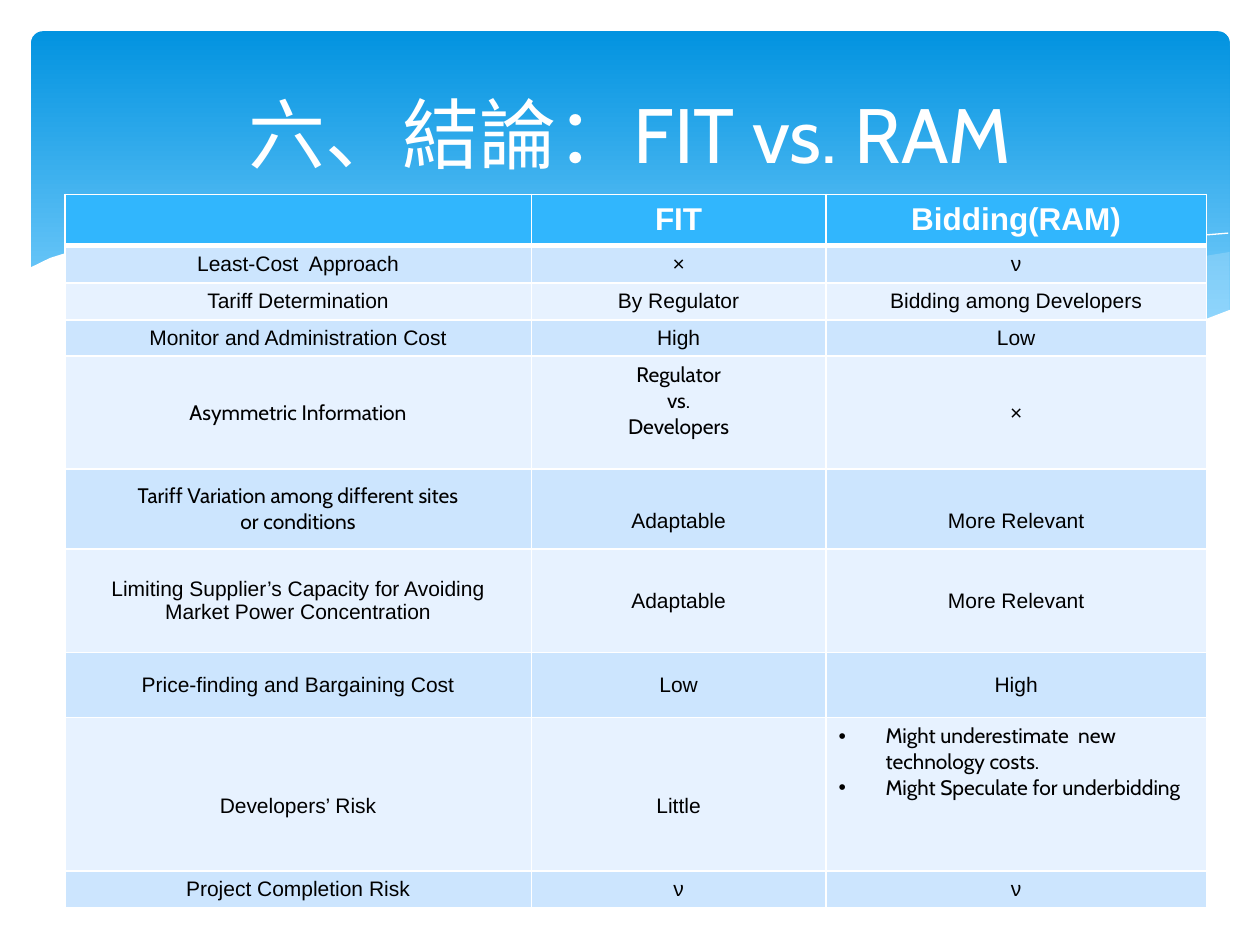
from lxml import etree
from pptx import Presentation
from pptx.dml.color import RGBColor
from pptx.enum.shapes import MSO_SHAPE
from pptx.enum.text import MSO_ANCHOR, PP_ALIGN
from pptx.oxml.ns import qn
from pptx.util import Cm, Pt

CENTER, LEFT = PP_ALIGN.CENTER, PP_ALIGN.LEFT
MIDDLE, TOP = MSO_ANCHOR.MIDDLE, MSO_ANCHOR.TOP
ROUNDED = MSO_SHAPE.ROUNDED_RECTANGLE
TITLE_ONLY = 5

WHITE = RGBColor(0xFF, 0xFF, 0xFF)
BLACK = RGBColor(0, 0, 0)
BAND_DARK = RGBColor(0x02, 0x93, 0xE0)
BAND_LIGHT = RGBColor(0x81, 0xD2, 0xFE)
WAVE_PALE = RGBColor(0xC6, 0xE7, 0xFC)
HEADER_BLUE = RGBColor(0x31, 0xB6, 0xFD)
ROW_FILLS = (RGBColor(0xCC, 0xE5, 0xFE), RGBColor(0xE7, 0xF2, 0xFF))

# Wave points in centimetres from the top left corner of the wave box
RIGHT_WAVE = [
    (24.21, 0.41), (23.16, 0.58), (22.05, 0.81), (20.55, 1.17), (19.2, 1.47),
    (17.93, 1.75), (16.21, 2.06), (17.32, 2.21), (18.64, 2.34), (19.81, 2.39),
    (20.85, 2.36), (21.79, 2.26), (22.61, 2.11), (23.34, 1.9), (24.21, 1.6)]
MIDDLE_WAVE = [
    (22.1, 2.26), (20.68, 2.06), (19.1, 1.78), (17.35, 1.42), (15.39, 0.97),
    (13.87, 0.61), (12.47, 0.36), (11.23, 0.18), (10.08, 0.08), (8.59, 0.03),
    (7.37, 0.1), (6.68, 0.18), (8.1, 0.38), (9.68, 0.69), (10.82, 0.97),
    (12.88, 1.42), (14.68, 1.8), (16.31, 2.08), (17.75, 2.29), (19.05, 2.36),
    (20.19, 2.39), (21.18, 2.36)]
LONG_CREST = [
    (7.26, 0.28), (8.15, 0.15), (9.6, 0.08), (11.33, 0.13), (12.95, 0.25),
    (14.86, 0.51), (16.31, 0.74), (17.88, 1.07), (19.61, 1.45), (21.49, 1.96),
    (22.45, 2.24)]
SHORT_CREST = [
    (14.99, 1.85), (16.48, 1.45), (18.42, 0.99), (19.89, 0.66), (21.41, 0.38),
    (22.53, 0.2), (23.57, 0.08), (24.18, 0.03)]
WHITE_WAVE = [
    (24.23, 1.57), (23.55, 1.83), (22.78, 2.06), (21.95, 2.21), (21.01, 2.31),
    (19.96, 2.36), (18.75, 2.31), (17.4, 2.18), (15.88, 1.98), (14.12, 1.68),
    (12.19, 1.24), (10.77, 0.91), (9.35, 0.58), (8.05, 0.33), (6.83, 0.15),
    (5.77, 0.05), (4.78, 0), (3.51, 0), (2.44, 0.08), (1.57, 0.23),
    (0.91, 0.38), (0.43, 0.53), (0, 0.74), (0, 3.68), (24.23, 3.68)]

COLUMN_WIDTHS = (9.4, 5.94, 7.67)
ROW_HEIGHTS = (0.95, 0.75, 0.75, 0.73, 2.28, 1.61, 2.08, 1.31, 3.1, 0.73)
# Each cell holds its paragraphs, one to a line
COMPARISON = [
    ("", "FIT", "Bidding(RAM)"),
    ("Least-Cost  Approach", "×", "ν"),
    ("Tariff Determination", "By Regulator", "Bidding among Developers"),
    ("Monitor and Administration Cost", "High", "Low"),
    ("Asymmetric Information", "Regulator\nvs.\nDevelopers", "×"),
    ("Tariff Variation among different sites\nor conditions", "Adaptable", "More Relevant"),
    ("Limiting Supplier’s Capacity for Avoiding Market Power Concentration",
     "Adaptable", "More Relevant"),
    ("Price-finding and Bargaining Cost", "Low", "High"),
    ("Developers’ Risk", "Little",
     "Might underestimate  new technology costs.\nMight Speculate for underbidding"),
    ("Project Completion Risk", "ν", "ν"),
]
CABIN_CELLS = {(4, 0), (4, 1), (5, 0), (8, 2)}
TOP_CELLS = {(4, 1), (8, 2)}
LOWERED_CELLS = {(5, 1), (5, 2), (8, 0), (8, 1)}
BULLETED_CELL = (8, 2)


def add_outline(slide, left, top, points, closed):
    vertices = [(left + Cm(x), top + Cm(y)) for x, y in points]
    builder = slide.shapes.build_freeform(*vertices[0])
    builder.add_line_segments(vertices[1:], close=closed)
    outline = builder.convert_to_shape()
    outline.shadow.inherit = False
    return outline


def add_wave(slide, left, top, points, color, opacity=100):
    wave = add_outline(slide, left, top, points, True)
    wave.fill.solid()
    wave.fill.fore_color.rgb = color
    wave.line.fill.background()
    if opacity < 100:
        tint = wave.fill._xPr.find(".//" + qn("a:srgbClr"))
        etree.SubElement(tint, qn("a:alpha"), val=str(opacity * 1000))


def add_crest(slide, left, top, points):
    crest = add_outline(slide, left, top, points, False)
    crest.fill.background()
    crest.line.color.rgb = WHITE
    crest.line.width = Pt(0.75)


def add_banner(slide, left, top, width, height):
    """Gradient band whose lower edge is cut by waves."""
    band = slide.shapes.add_shape(ROUNDED, left, top, width, height)
    band.adjustments[0] = 0.034
    band.shadow.inherit = False
    band.line.fill.background()
    band.fill.gradient()
    band.fill.gradient_angle = 270
    stops = band.fill.gradient_stops
    for stop, color, position in zip(stops, (BAND_DARK, BAND_LIGHT), (0, 0.9)):
        stop.color.rgb = color
        stop.position = position

    wave_left, wave_top = left - Cm(0.05), top + Cm(4.04)
    add_wave(slide, wave_left, wave_top, RIGHT_WAVE, WAVE_PALE, 29)
    add_wave(slide, wave_left, wave_top, MIDDLE_WAVE, WAVE_PALE, 40)
    for crest in (LONG_CREST, SHORT_CREST):
        add_crest(slide, wave_left, wave_top, crest)
    add_wave(slide, wave_left, wave_top, WHITE_WAVE, WHITE)


def add_run(paragraph, text, size, font, color, bold=False):
    run = paragraph.add_run()
    run.text = text
    run.font.size = Pt(size)
    run.font.name = font
    run.font.bold = bold
    run.font.color.rgb = color


def place_title(slide, left, top, width, height):
    title = slide.shapes.title
    title.left, title.top, title.width, title.height = left, top, width, height
    title.text_frame.vertical_anchor = MIDDLE
    heading = title.text_frame.paragraphs[0]
    heading.alignment = CENTER
    add_run(heading, "六、結論：FIT vs. RAM", 44, "Cabin", WHITE)
    title.element.getparent().append(title.element)  # in front of the banner


def set_borders(cell, top_width, bottom_width):
    properties = cell._tc.get_or_add_tcPr()
    sides = (("lnL", 1), ("lnR", 1), ("lnT", top_width), ("lnB", bottom_width))
    for index, (side, width) in enumerate(sides):
        border = etree.Element(qn(f"a:{side}"), w=str(Pt(width)))
        fill = etree.SubElement(border, qn("a:solidFill"))
        etree.SubElement(fill, qn("a:srgbClr"), val=str(WHITE))
        properties.insert(index, border)


def add_bullet(paragraph):
    properties = paragraph._p.get_or_add_pPr()
    properties.set("marL", str(Cm(0.95)))
    properties.set("indent", str(-Cm(0.95)))
    etree.SubElement(properties, qn("a:buFont"), typeface="Arial")
    etree.SubElement(properties, qn("a:buChar"), char="•")


def fill_cell(cell, row, column, text):
    header = row == 0
    place = (row, column)
    cell.fill.solid()
    cell.fill.fore_color.rgb = HEADER_BLUE if header else ROW_FILLS[(row - 1) % 2]
    set_borders(cell, 3 if row == 1 else 1, 3 if header else 1)
    cell.vertical_anchor = TOP if place in TOP_CELLS else MIDDLE
    if place in LOWERED_CELLS:
        cell.margin_top = Cm(0.6)
    font = "Cabin" if place in CABIN_CELLS else "Arial"
    for index, line in enumerate(text.split("\n") if text else []):
        frame = cell.text_frame
        paragraph = frame.add_paragraph() if index else frame.paragraphs[0]
        paragraph.alignment = LEFT if place == BULLETED_CELL else CENTER
        if place == BULLETED_CELL:
            add_bullet(paragraph)
        add_run(paragraph, line, 18 if header else 12, font,
                WHITE if header else BLACK, header)


def add_comparison(slide, left, top):
    table = slide.shapes.add_table(
        len(ROW_HEIGHTS), len(COLUMN_WIDTHS), left, top,
        Cm(sum(COLUMN_WIDTHS)), Cm(sum(ROW_HEIGHTS))).table
    for column, width in zip(table.columns, COLUMN_WIDTHS):
        column.width = Cm(width)
    for row, height in zip(table.rows, ROW_HEIGHTS):
        row.height = Cm(height)
    for row, texts in enumerate(COMPARISON):
        for column, text in enumerate(texts):
            fill_cell(table.cell(row, column), row, column, text)


def main():
    deck = Presentation()
    deck.slide_width, deck.slide_height = Cm(25.4), Cm(19.05)
    slide = deck.slides.add_slide(deck.slide_layouts[TITLE_ONLY])
    add_banner(slide, Cm(0.63), Cm(0.63), Cm(24.16), Cm(6.86))
    place_title(slide, Cm(1.27), Cm(0.94), Cm(22.86), Cm(3.48))
    add_comparison(slide, Cm(1.31), Cm(3.92))
    deck.save("out.pptx")


if __name__ == "__main__":
    main()
